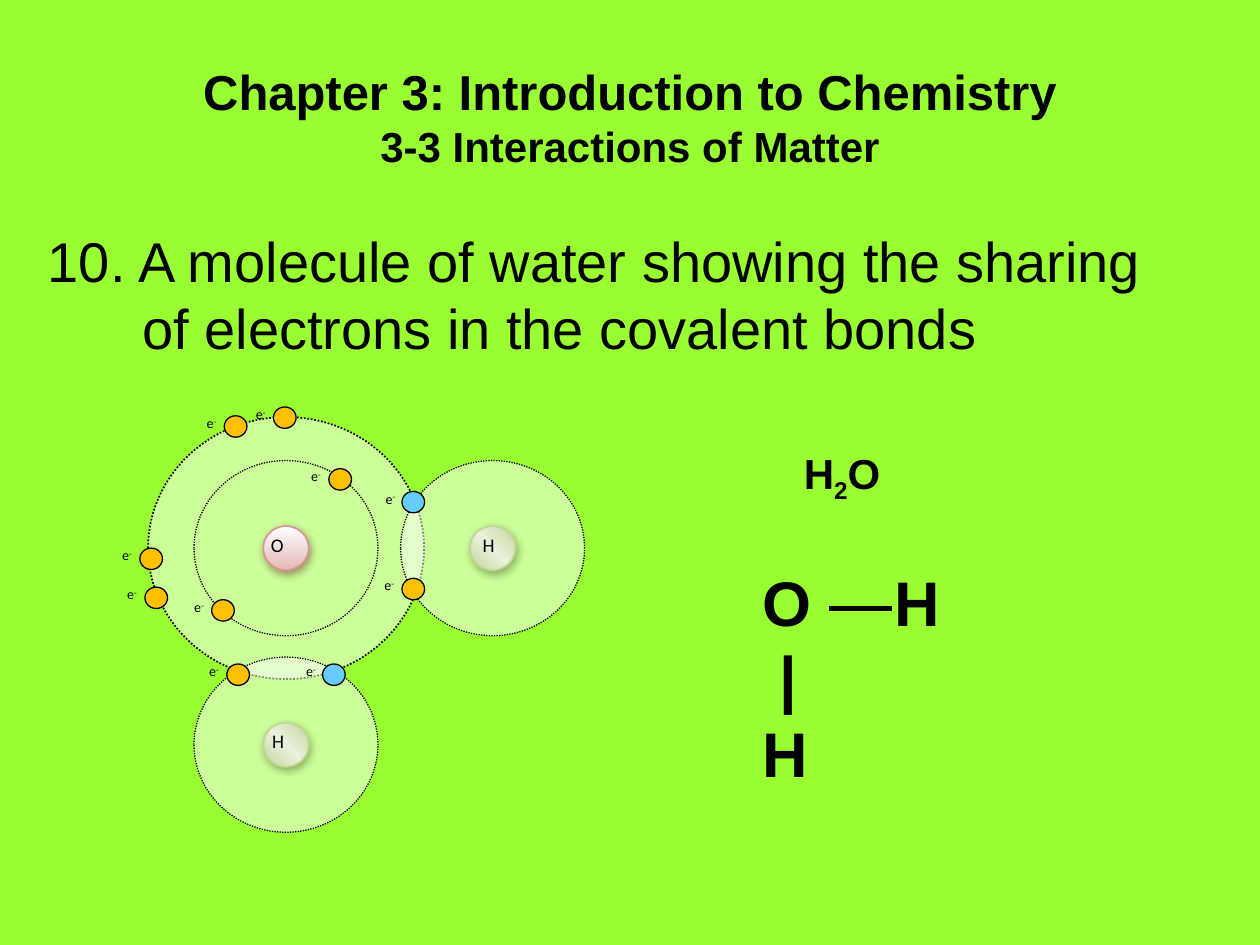
"""Build a slide showing the shared electrons of a water molecule."""
from dataclasses import dataclass
from typing import Optional

import pptx
import pptx.dml.color
import pptx.enum.dml
import pptx.enum.shapes
import pptx.enum.text
import pptx.oxml
import pptx.oxml.ns
import pptx.util

Inches = pptx.util.Inches
Pt = pptx.util.Pt
NAMESPACE = pptx.oxml.ns.nsdecls("a")


@dataclass(frozen=True)
class Theme:
    background: str = "99FF33"
    ink: str = "000000"
    shell: str = "FFFFFF"
    electron: str = "FFC000"
    shared_electron: str = "66CCFF"
    font: str = "Arial"
    label_font: str = "Calibri"
    charge_font: str = "Times New Roman"
    title: int = 28
    subtitle: int = 24
    body: int = 32
    formula: int = 24
    structure: int = 36
    atom: int = 11
    charge: int = 8


THEME = Theme()


@dataclass(frozen=True)
class Piece:
    text: str
    size: float
    font: str = THEME.font
    bold: bool = False
    baseline: int = 0


@dataclass(frozen=True)
class NucleusStyle:
    stops: tuple
    angle: int
    line: str
    shadow: str


@dataclass(frozen=True)
class Atom:
    symbol: str
    x: float
    y: float
    label_offset: float
    style: NucleusStyle
    outer: Optional[tuple] = None


@dataclass(frozen=True)
class Electron:
    x: float
    y: float
    color: str = THEME.electron
    label_dx: float = -0.19


OXYGEN = NucleusStyle(((0, "E5B8B7"), (100, "FFFFFF")), 270, "D99594", "622423")
HYDROGEN = NucleusStyle(
    ((0, "C2D69B"), (50, "EAF1DD"), (100, "C2D69B")), 135, "C2D69B", "4E6128")
SHELL_SIZE = (1.46, 1.39)
NUCLEUS_SIZE = (0.36, 0.35)
ELECTRON_SIZE = (0.18, 0.17)

ATOMS = (
    Atom("O", 2.27, 4.35, -0.17, OXYGEN, (2.19, 2.08)),
    Atom("H", 3.91, 4.35, -0.13, HYDROGEN),
    Atom("H", 2.27, 5.91, -0.16, HYDROGEN),
)
ELECTRONS = (
    Electron(2.17, 3.23), Electron(1.68, 4.76), Electron(2.61, 3.72),
    Electron(3.19, 4.59), Electron(1.8, 5.27), Electron(1.78, 3.3),
    Electron(1.11, 4.35), Electron(1.15, 4.66),
    Electron(2.56, 5.27, THEME.shared_electron, -0.18),
    Electron(3.19, 3.9, THEME.shared_electron, -0.18),
)


def color(value: str):
    return pptx.dml.color.RGBColor.from_string(value)


def format_run(run, piece: Piece) -> None:
    run.font.size = Pt(piece.size)
    run.font.name = piece.font
    run.font.bold = piece.bold
    run.font.color.rgb = color(THEME.ink)
    if piece.baseline:
        run.font._element.set("baseline", str(piece.baseline * 1000))


def set_margins(frame) -> None:
    frame.word_wrap = True
    frame.margin_left = frame.margin_right = Inches(0.05)
    frame.margin_top = frame.margin_bottom = Inches(0.05)


def add_text(shapes, box: tuple, *lines: tuple):
    shape = shapes.add_textbox(*map(Inches, box))
    frame = shape.text_frame
    set_margins(frame)
    for index, pieces in enumerate(lines):
        paragraph = frame.add_paragraph() if index else frame.paragraphs[0]
        for piece in pieces:
            run = paragraph.add_run()
            run.text = piece.text
            format_run(run, piece)
    return frame


def add_circle(shapes, center: tuple, size: tuple, fill: Optional[str],
               line: str = THEME.ink, width: float = 0.75):
    (x, y), (w, h) = center, size
    shape = shapes.add_shape(pptx.enum.shapes.MSO_SHAPE.OVAL, Inches(x - w / 2),
                             Inches(y - h / 2), Inches(w), Inches(h))
    shape.shadow.inherit = False
    if fill:
        shape.fill.solid()
        shape.fill.fore_color.rgb = color(fill)
    else:
        shape.fill.background()
    shape.line.color.rgb = color(line)
    shape.line.width = Pt(width)
    return shape


def add_shell(shapes, center: tuple, size: tuple, filled: bool, width: float) -> None:
    shape = add_circle(shapes, center, size, THEME.shell if filled else None, width=width)
    shape.line.dash_style = pptx.enum.dml.MSO_LINE.ROUND_DOT
    if filled:
        fill_color = shape._element.spPr.find(
            pptx.oxml.ns.qn("a:solidFill") + "/" + pptx.oxml.ns.qn("a:srgbClr"))
        fill_color.append(pptx.oxml.parse_xml(f'<a:alpha {NAMESPACE} val="50000"/>'))


def add_nucleus(shapes, center: tuple, style: NucleusStyle) -> None:
    shape = add_circle(shapes, center, NUCLEUS_SIZE, style.stops[0][1], style.line, 1)
    properties = shape._element.spPr
    stops = "".join(f'<a:gs pos="{place * 1000}"><a:srgbClr val="{value}"/></a:gs>'
                    for place, value in style.stops)
    properties.replace(properties.find(pptx.oxml.ns.qn("a:solidFill")), pptx.oxml.parse_xml(
        f'<a:gradFill {NAMESPACE} rotWithShape="1"><a:gsLst>{stops}</a:gsLst>'
        f'<a:lin ang="{style.angle * 60000}" scaled="1"/></a:gradFill>'))
    properties.replace(properties.find(pptx.oxml.ns.qn("a:effectLst")), pptx.oxml.parse_xml(
        f'<a:effectLst {NAMESPACE}><a:outerShdw blurRad="{Pt(5)}" dist="{Pt(2.2)}" '
        f'dir="{63 * 60000}" algn="ctr" rotWithShape="0"><a:srgbClr val="{style.shadow}">'
        '<a:alpha val="50000"/></a:srgbClr></a:outerShdw></a:effectLst>'))


def add_atom(shapes, atom: Atom) -> None:
    center = (atom.x, atom.y)
    if atom.outer:
        add_shell(shapes, center, atom.outer, True, 1)
    add_shell(shapes, center, SHELL_SIZE, not atom.outer, 0.75)
    add_nucleus(shapes, center, atom.style)
    add_text(shapes, (atom.x + atom.label_offset, atom.y - 0.17, 0.5, 0.28),
             (Piece(atom.symbol, THEME.atom, THEME.label_font),))


def add_electron(shapes, electron: Electron) -> None:
    width, height = ELECTRON_SIZE
    center = (electron.x + width / 2, electron.y + height / 2)
    add_circle(shapes, center, ELECTRON_SIZE, electron.color)
    add_text(shapes, (electron.x + electron.label_dx, electron.y - 0.06, 0.58, 0.24),
             (Piece("e", THEME.charge, THEME.label_font),
              Piece("-", THEME.charge, THEME.charge_font, baseline=30)))


def add_title(slide) -> None:
    title = slide.shapes.title
    title.left, title.top, title.width, title.height = map(Inches, (0.5, 0.3, 9, 1.25))
    frame = title.text_frame
    frame.text = "Chapter 3: Introduction to Chemistry\v3-3 Interactions of Matter"
    set_margins(frame)
    frame.vertical_anchor = pptx.enum.text.MSO_ANCHOR.MIDDLE
    paragraph = frame.paragraphs[0]
    paragraph.alignment = pptx.enum.text.PP_ALIGN.CENTER
    for run, size in zip(paragraph.runs, (THEME.title, THEME.subtitle)):
        format_run(run, Piece(run.text, size, bold=True))


def add_statement(shapes) -> None:
    frame = add_text(shapes, (0.33, 1.75, 8.9, 1.11), (Piece(
        "10. A molecule of water showing the sharing of electrons in the covalent bonds",
        THEME.body),))
    properties = frame.paragraphs[0]._p.get_or_add_pPr()
    properties.set("marL", str(Inches(0.75)))
    properties.set("indent", str(Inches(-0.75)))


def add_formulas(shapes) -> None:
    add_text(shapes, (6.33, 3.5, 1.83, 0.54), tuple(
        Piece(text, THEME.formula, bold=True, baseline=baseline)
        for text, baseline in (("H", 0), ("2", -25), ("O", 0))))
    frame = add_text(shapes, (6, 4.42, 2.33, 1.83), *(
        (Piece(text, THEME.structure, bold=True),) for text in ("O\tH", " |", "H")))
    frame.paragraphs[0]._p.get_or_add_pPr().append(pptx.oxml.parse_xml(
        f'<a:tabLst {NAMESPACE}><a:tab pos="{Inches(1.05)}" algn="l"/></a:tabLst>'))
    bond = shapes.add_connector(pptx.enum.shapes.MSO_CONNECTOR.STRAIGHT,
                                *map(Inches, (6.58, 4.83, 7.08, 4.83)))
    bond.line.color.rgb = color(THEME.ink)
    bond.line.width = Pt(2.75)
    bond._element.spPr.append(pptx.oxml.parse_xml(f"<a:effectLst {NAMESPACE}/>"))


def main() -> None:
    presentation = pptx.Presentation()
    presentation.slide_width, presentation.slide_height = Inches(10), Inches(7.5)
    slide = presentation.slides.add_slide(presentation.slide_layouts[5])
    slide.background.fill.solid()
    slide.background.fill.fore_color.rgb = color(THEME.background)
    add_title(slide)
    add_statement(slide.shapes)
    add_formulas(slide.shapes)
    molecule = slide.shapes.add_group_shape().shapes
    for atom in ATOMS:
        add_atom(molecule, atom)
    for electron in ELECTRONS:
        add_electron(molecule, electron)
    presentation.save("out.pptx")


if __name__ == "__main__":
    main()
